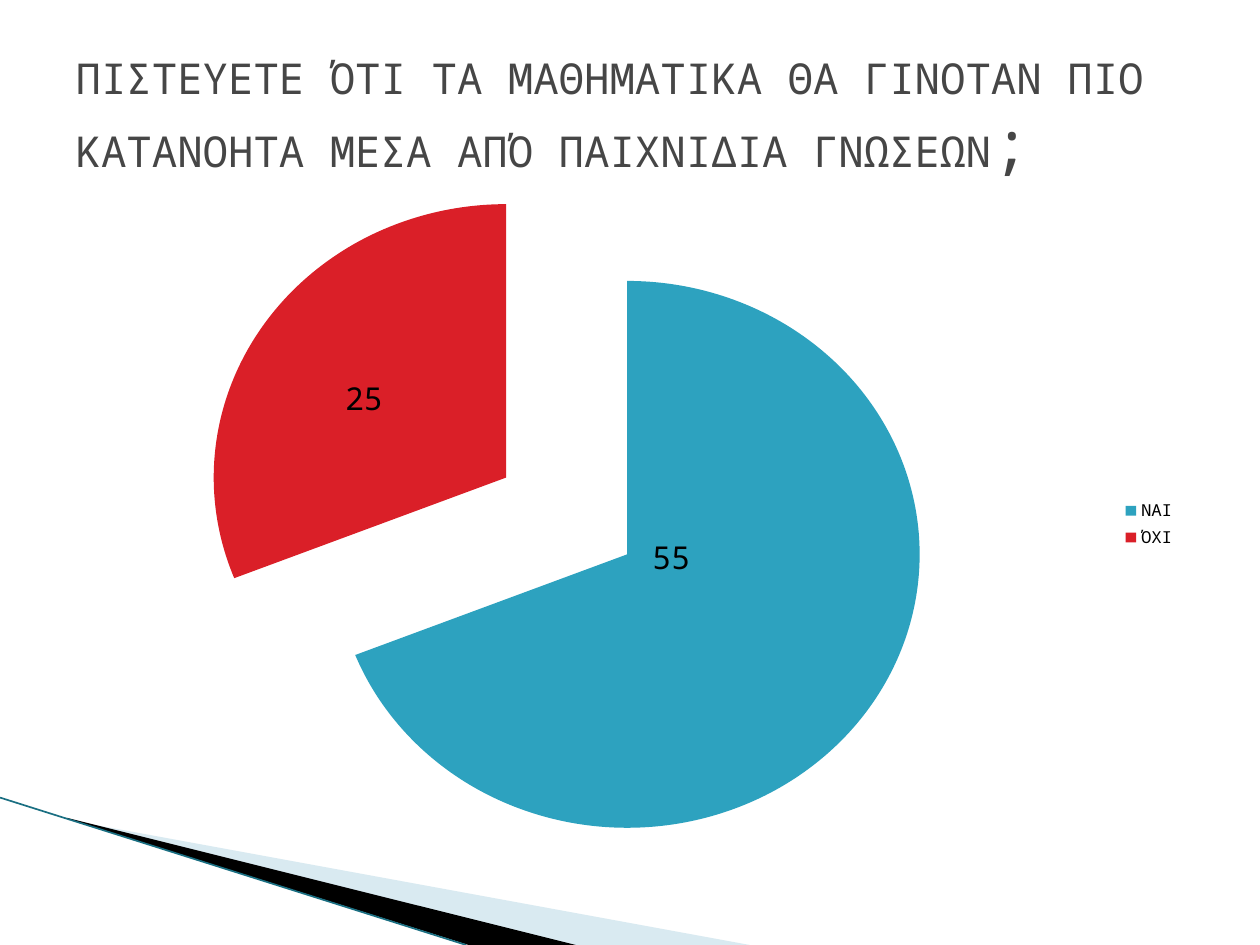
from lxml import etree
from pptx import Presentation
from pptx.chart.data import CategoryChartData
from pptx.dml.color import RGBColor
from pptx.enum.chart import XL_CHART_TYPE, XL_LEGEND_POSITION
from pptx.enum.shapes import MSO_CONNECTOR
from pptx.enum.text import MSO_ANCHOR, MSO_AUTO_SIZE, PP_ALIGN
from pptx.oxml import parse_xml
from pptx.oxml.ns import nsdecls, qn
from pptx.util import Inches, Pt

PIE = XL_CHART_TYPE.PIE
RIGHT = XL_LEGEND_POSITION.RIGHT
STRAIGHT = MSO_CONNECTOR.STRAIGHT
MIDDLE = MSO_ANCHOR.MIDDLE
NO_FIT = MSO_AUTO_SIZE.NONE
GROW = MSO_AUTO_SIZE.SHAPE_TO_FIT_TEXT
LEFT = PP_ALIGN.LEFT
FONT = "Noto Sans Mono"


def rgb(value):
    return RGBColor.from_string(value)


def style(font, size, color):
    font.name = FONT
    font.size = Pt(size)
    font.color.rgb = rgb(color)


prs = Presentation()
prs.slide_width = Inches(10)
prs.slide_height = Inches(7.5)
s = prs.slides.add_slide(prs.slide_layouts[5])

wedges = [
    ([(0.55, 6.51), (5.95, 7.5), (4.56, 7.5), (0.55, 6.5)], "A0CBDC", 40),
    ([(0.53, 6.49), (4.57, 7.5), (3.72, 7.5), (0.54, 6.5)], "000000", 100),
]
for points, color, opacity in wedges:
    corners = [(Inches(x), Inches(y)) for x, y in points]
    builder = s.shapes.build_freeform(*corners[0])
    builder.add_line_segments(corners[1:], close=True)
    sp = builder.convert_to_shape()
    sp.shadow.inherit = False
    sp.line.fill.background()
    sp.fill.solid()
    sp.fill.fore_color.rgb = rgb(color)
    if opacity < 100:
        clr = sp._element.spPr.find(".//" + qn("a:srgbClr"))
        etree.SubElement(clr, qn("a:alpha")).set("val", str(opacity * 1000))

edge = s.shapes.add_connector(STRAIGHT, 0, Inches(6.33), Inches(3.7), Inches(7.5))
edge.line.color.rgb = rgb("1A6F82")
edge.line.width = Pt(0.95)
etree.SubElement(edge._element.spPr, qn("a:effectLst"))

title = s.shapes.title
title.left, title.top = Inches(0.5), Inches(0.3)
title.width, title.height = Inches(9), Inches(1.25)
tf = title.text_frame
tf.word_wrap = True
tf.auto_size = NO_FIT
tf.vertical_anchor = MIDDLE
p = tf.paragraphs[0]
p.alignment = LEFT
title_runs = [
    ("ΠΙΣΤΕΥΕΤΕ ΌΤΙ ΤΑ ΜΑΘΗΜΑΤΙΚΑ ΘΑ ΓΙΝΟΤΑΝ ΠΙΟ "
     "ΚΑΤΑΝΟΗΤΑ ΜΕΣΑ ΑΠΌ ΠΑΙΧΝΙΔΙΑ ΓΝΩΣΕΩΝ", 24.3),
    (";", 36.9),
]
for text, size in title_runs:
    r = p.add_run()
    r.text = text
    style(r.font, size, "464646")

data = CategoryChartData()
data.categories = ["ΝΑΙ", "ΌΧΙ"]
data.add_series("Series 1", (69, 31))
chart = s.shapes.add_chart(
    PIE, Inches(0.43), Inches(1.62), Inches(9), Inches(4.95), data).chart
style(chart.font, 10, "000000")
chart.has_title = False
chart.has_legend = True
chart.legend.position = RIGHT
chart.legend.include_in_layout = False

plot = chart.plots[0]
plot.vary_by_categories = True
for i, color in enumerate(["2DA2BF", "DA1F28"]):
    point = plot.series[0].points[i]
    point.format.fill.solid()
    point.format.fill.fore_color.rgb = rgb(color)
    point.format.line.fill.background()
for slice_xml in plot.series[0]._element.findall(qn("c:dPt")):
    slice_xml.find(qn("c:spPr")).addprevious(
        parse_xml(f'<c:explosion {nsdecls("c")} val="25"/>'))

plot_area = chart._chartSpace.chart.plotArea
for old in plot_area.findall(qn("c:layout")):
    plot_area.remove(old)
plot_area.insert(0, parse_xml(
    f'<c:layout {nsdecls("c")}><c:manualLayout>'
    '<c:layoutTarget val="inner"/><c:xMode val="edge"/><c:yMode val="edge"/>'
    '<c:x val="0.194"/><c:y val="0.017"/><c:w val="0.516"/><c:h val="0.938"/>'
    '</c:manualLayout></c:layout>'))

for text, x, y, width in [("55", 5.08, 4.22, 1.1), ("25", 2.64, 2.96, 0.87)]:
    label = s.shapes.add_textbox(Inches(x), Inches(y), Inches(width), Inches(0.4))
    tf = label.text_frame
    tf.word_wrap = True
    tf.auto_size = GROW
    tf.text = text
    style(tf.paragraphs[0].runs[0].font, 18, "000000")

prs.save("out.pptx")
